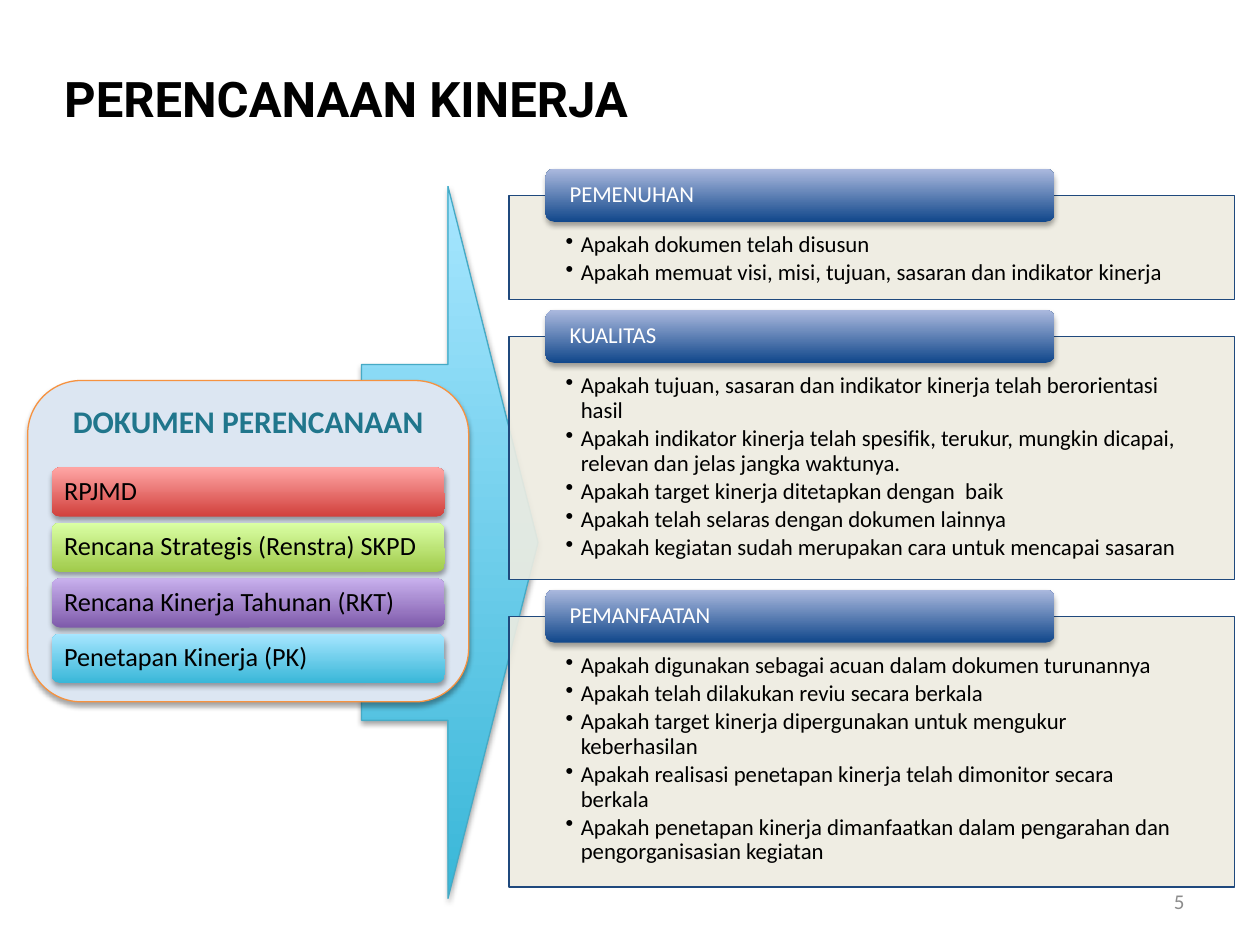
from dataclasses import dataclass
from typing import Optional

from lxml import etree
from pptx import Presentation
from pptx.dml.color import RGBColor
from pptx.enum import shapes, text
from pptx.oxml import ns
from pptx.util import Inches, Pt

BLACK = RGBColor(0x00, 0x00, 0x00)
WHITE = RGBColor(0xFF, 0xFF, 0xFF)
GRAY = RGBColor(0x8C, 0x8C, 0x8C)
TEAL = RGBColor(0x20, 0x76, 0x8C)
ARROW_LINE = RGBColor(0x46, 0xAA, 0xC5)
ORANGE = RGBColor(0xF6, 0x92, 0x40)
PALE_BLUE = RGBColor(0xDC, 0xE6, 0xF2)
CREAM = RGBColor(0xEE, 0xEC, 0xE1)
NAVY = RGBColor(0x1F, 0x49, 0x7D)


@dataclass(frozen=True)
class Gradient:
    bottom: RGBColor
    top: RGBColor


@dataclass(frozen=True)
class Document:
    name: str
    gradient: Gradient


@dataclass(frozen=True)
class Panel:
    heading: str
    height: float
    questions: tuple[str, ...]


AQUA = Gradient(RGBColor(0x39, 0xB7, 0xD8), RGBColor(0xA7, 0xE6, 0xFF))
RED = Gradient(RGBColor(0xD1, 0x40, 0x3C), RGBColor(0xFF, 0xA6, 0xA5))
GREEN = Gradient(RGBColor(0xA0, 0xCA, 0x4A), RGBColor(0xDA, 0xFF, 0xA5))
PURPLE = Gradient(RGBColor(0x7F, 0x5B, 0xAB), RGBColor(0xC8, 0xB0, 0xED))
BLUE = Gradient(RGBColor(0x11, 0x47, 0x8B), RGBColor(0xAB, 0xB9, 0xDE))

DOCUMENTS = (
    Document("RPJMD", RED),
    Document("Rencana Strategis (Renstra) SKPD", GREEN),
    Document("Rencana Kinerja Tahunan (RKT)", PURPLE),
    Document("Penetapan Kinerja (PK)", AQUA),
)
PANELS = (
    Panel("PEMENUHAN", 0.83, (
        "Apakah dokumen telah disusun",
        "Apakah memuat visi, misi, tujuan, sasaran dan indikator kinerja",
    )),
    Panel("KUALITAS", 1.93, (
        "Apakah tujuan, sasaran dan indikator kinerja telah berorientasi hasil",
        "Apakah indikator kinerja telah spesifik, terukur, mungkin dicapai, "
        "relevan dan jelas jangka waktunya.",
        "Apakah target kinerja ditetapkan dengan  baik",
        "Apakah telah selaras dengan dokumen lainnya",
        "Apakah kegiatan sudah merupakan cara untuk mencapai sasaran",
    )),
    Panel("PEMANFAATAN", 2.15, (
        "Apakah digunakan sebagai acuan dalam dokumen turunannya",
        "Apakah telah dilakukan reviu secara berkala",
        "Apakah target kinerja dipergunakan untuk mengukur keberhasilan",
        "Apakah realisasi penetapan kinerja telah dimonitor secara berkala",
        "Apakah penetapan kinerja dimanfaatkan dalam pengarahan dan "
        "pengorganisasian kegiatan",
    )),
)
BAR_TOP, BAR_PITCH = 3.71, 0.44
HEADING_TOP, HEADING_OVERLAP, PANEL_GAP = 1.34, 0.21, 0.08


def add_box(slide, kind, left: float, top: float, width: float, height: float,
            fill: RGBColor | Gradient, line: Optional[RGBColor] = None):
    shape = slide.shapes.add_shape(
        kind, Inches(left), Inches(top), Inches(width), Inches(height))
    shape.shadow.inherit = False
    if isinstance(fill, Gradient):
        shape.fill.gradient()
        shape.fill.gradient_angle = 90
        for stop, color in zip(shape.fill.gradient_stops, (fill.bottom, fill.top)):
            stop.color.rgb = color
    else:
        shape.fill.solid()
        shape.fill.fore_color.rgb = fill
    if line is None:
        shape.line.fill.background()
    else:
        shape.line.color.rgb = line
        shape.line.width = Pt(0.75)
    return shape


def add_shadow(shape) -> None:
    effects = shape.element.spPr.find(ns.qn("a:effectLst"))
    shadow = etree.SubElement(
        effects, ns.qn("a:outerShdw"), blurRad=str(Pt(3.1)), dist=str(Pt(1.8)),
        dir="5400000", rotWithShape="0")
    color = etree.SubElement(shadow, ns.qn("a:srgbClr"), val="000000")
    etree.SubElement(color, ns.qn("a:alpha"), val="35000")


def set_opacity(shape, percent: int) -> None:
    color = shape.element.spPr.find(ns.qn("a:solidFill")).find(ns.qn("a:srgbClr"))
    etree.SubElement(color, ns.qn("a:alpha"), val=str(percent * 1000))


def set_frame(shape, anchor, left: float = 0.1, top: float = 0.05,
              right: float = 0.1, bottom: float = 0.05) -> None:
    frame = shape.text_frame
    frame.word_wrap = True
    frame.vertical_anchor = anchor
    frame.margin_left, frame.margin_right = Inches(left), Inches(right)
    frame.margin_top, frame.margin_bottom = Inches(top), Inches(bottom)


def write(paragraph, content: str, size: float, color: RGBColor,
          align=text.PP_ALIGN.LEFT, bold: bool = False, face: str = "Calibri") -> None:
    paragraph.text = content
    paragraph.alignment = align
    paragraph.font.name = face
    paragraph.font.size = Pt(size)
    paragraph.font.bold = bold
    paragraph.font.color.rgb = color


def add_bullet(paragraph) -> None:
    properties = paragraph._p.get_or_add_pPr()
    properties.set("marL", str(Inches(0.12)))
    properties.set("indent", str(-Inches(0.12)))
    etree.SubElement(properties, ns.qn("a:buChar"), char="•")


def add_label_bar(slide, left: float, top: float, width: float, height: float,
                  gradient: Gradient, label: str, size: float, color: RGBColor,
                  margin: float) -> None:
    bar = add_box(slide, shapes.MSO_SHAPE.ROUNDED_RECTANGLE,
                  left, top, width, height, gradient)
    add_shadow(bar)
    set_frame(bar, text.MSO_ANCHOR.MIDDLE, margin, 0, margin, 0)
    paragraph = bar.text_frame.paragraphs[0]
    paragraph.line_spacing = 0.9
    write(paragraph, label, size, color)


def add_panel(slide, panel: Panel, heading_top: float) -> None:
    box = add_box(slide, shapes.MSO_SHAPE.RECTANGLE, 4.04,
                  heading_top + HEADING_OVERLAP, 5.76, panel.height, CREAM, NAVY)
    set_opacity(box, 90)
    set_frame(box, text.MSO_ANCHOR.TOP, 0.45, 0.3, 0.45, 0.1)
    frame = box.text_frame
    for index, question in enumerate(panel.questions):
        paragraph = frame.add_paragraph() if index else frame.paragraphs[0]
        paragraph.line_spacing = 0.9
        paragraph.space_after = Pt(2)
        add_bullet(paragraph)
        write(paragraph, question, 13, BLACK)
    add_label_bar(slide, 4.33, heading_top, 4.04, 0.42, BLUE,
                  panel.heading, 13, WHITE, 0.17)


def main() -> None:
    presentation = Presentation()
    presentation.slide_width, presentation.slide_height = Inches(10), Inches(7.5)
    slide = presentation.slides.add_slide(presentation.slide_layouts[5])

    title = slide.shapes.title
    title.left, title.top = Inches(0.41), Inches(0.36)
    title.width, title.height = Inches(9), Inches(0.83)
    set_frame(title, text.MSO_ANCHOR.MIDDLE)
    write(title.text_frame.paragraphs[0], "PERENCANAAN KINERJA", 28, BLACK,
          bold=True, face="Roboto")

    arrow = add_box(slide, shapes.MSO_SHAPE.RIGHT_ARROW,
                    2.87, 1.48, 1.4, 5.65, AQUA, ARROW_LINE)
    arrow.adjustments[1] = 0.51
    add_shadow(arrow)

    group_box = add_box(slide, shapes.MSO_SHAPE.ROUNDED_RECTANGLE,
                        0.22, 3.02, 3.5, 2.55, PALE_BLUE, ORANGE)
    add_shadow(group_box)
    set_frame(group_box, text.MSO_ANCHOR.TOP)
    write(group_box.text_frame.paragraphs[0], "DOKUMEN PERENCANAAN", 18, TEAL,
          text.PP_ALIGN.CENTER, bold=True)
    for index, document in enumerate(DOCUMENTS):
        add_label_bar(slide, 0.41, BAR_TOP + index * BAR_PITCH, 3.12, 0.39,
                      document.gradient, document.name, 15, BLACK, 0.08)

    heading_top = HEADING_TOP
    for panel in PANELS:
        add_panel(slide, panel, heading_top)
        heading_top += HEADING_OVERLAP + panel.height + PANEL_GAP

    page_number = slide.shapes.add_textbox(
        Inches(7.17), Inches(6.95), Inches(2.33), Inches(0.4))
    set_frame(page_number, text.MSO_ANCHOR.MIDDLE)
    write(page_number.text_frame.paragraphs[0], "5", 12, GRAY, text.PP_ALIGN.RIGHT)

    presentation.save("out.pptx")


if __name__ == "__main__":
    main()
